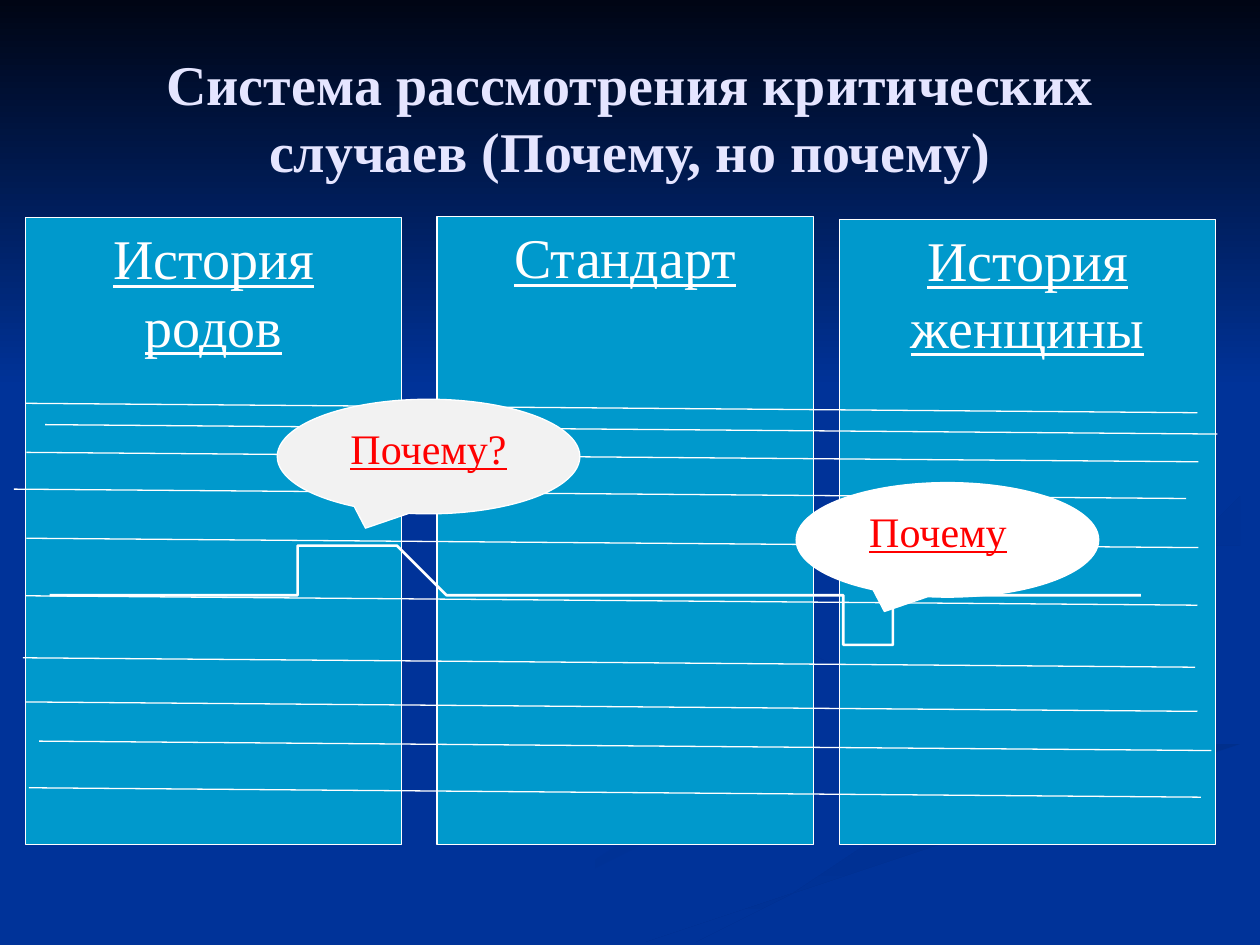
import pptx
import pptx.dml.color
import pptx.enum.shapes
import pptx.enum.text
import pptx.oxml.ns
import pptx.util
from lxml import etree
from pptx.util import Cm

FONT = "Times New Roman"
WHITE, RED, NAVY, PANEL_BLUE = "FFFFFF", "FF0000", "003399", "0099CC"
Shapes = pptx.enum.shapes.MSO_SHAPE
Anchor = pptx.enum.text.MSO_ANCHOR

# Background swooshes: outline in cm, gradient colours, counter-clockwise angle
SWOOSHES = [
    ([(19.8, 14.05), (18.5, 13.5), (15.5, 12.6), (14.6, 11.9), (14.5, 12.1),
      (15.5, 12.6), (18.5, 13.6), (19.8, 14.1), (19.9, 14.5), (19, 15.1),
      (17.4, 15.6), (13.7, 16.5), (10.6, 17.5), (7.62, 19.02), (9.17, 19.02),
      (12.7, 17.4), (15.8, 16.4), (19.2, 15.6), (20.2, 15), (20.2, 14.4)],
     (NAVY, "003193"), 0),
    ([(12.78, 19.02), (14.5, 19.02), (16.5, 18), (19.1, 17.1), (21.9, 16.3),
      (25.35, 15.47), (25.35, 14.76), (23.8, 15.3), (19.4, 16.4),
      (16, 17.6), (13.18, 18.97)],
     ("002F8C", NAVY), 270),
    ([(19.84, 11.68), (20.1, 12.15), (21, 12.6), (20.5, 12.2), (20.6, 11.75),
      (22.3, 11.15), (25.35, 10.67), (25.35, 10.21), (23.7, 10.54),
      (21.2, 10.92), (20.1, 11.35)],
     ("003091", NAVY), 315),
    ([(17.35, 10.92), (20.4, 10.3), (22.4, 9.4), (22.7, 8.5), (22.2, 7.6),
      (20.9, 6.6), (19.35, 5.92), (21, 6.75), (22.3, 7.8), (22.5, 8.7),
      (21.6, 9.5), (19.4, 10.1), (16.5, 10.67), (15.2, 11.1), (14.66, 11.73),
      (14.9, 12.2), (15.8, 12.7), (15.1, 12.05), (15.3, 11.6), (16, 11.2)],
     ("002F8E", NAVY), 315),
]

PANELS = [(0.51, 4.39, "История родов"), (8.81, 4.37, "Стандарт"),
          (16.92, 4.42, "История женщины")]
PANEL_WIDTH, PANEL_BOTTOM = 7.59, 17.02

# All record lines share one slope
LINE_STARTS = [(0.51, 8.13), (0.91, 8.56), (0.53, 9.12), (0.28, 9.86),
               (0.53, 10.85), (0.51, 12.01), (0.46, 13.26), (0.51, 14.15),
               (0.79, 14.94), (0.58, 15.88)]
LINE_RUN, LINE_DROP = 23.63, 0.19

DEVIATION_CURVE = [
    (0.58, 11.63), (1.02, 11.57), (1.52, 11.53), (5.61, 11.51), (5.82, 11.46),
    (6.2, 11.4), (6.5, 11.28), (6.78, 11.1), (7.04, 10.87), (7.14, 10.8),
    (7.47, 10.69), (7.67, 10.74), (7.87, 11), (8.2, 11.28), (8.26, 11.4),
    (8.61, 11.63), (8.89, 11.76), (11.07, 11.86), (14.94, 11.94),
    (16.46, 12.04), (16.71, 12.07), (16.87, 12.17), (17.2, 12.42),
    (17.25, 12.57), (17.4, 12.6), (17.65, 12.7), (17.86, 12.75), (18.2, 12.7),
    (18.42, 12.59), (18.5, 12.42), (18.82, 12.24), (19.13, 12.12),
    (19.46, 12.04), (19.81, 11.89), (21.6, 11.86), (23.44, 11.86)]


def color(value):
    return pptx.dml.color.RGBColor.from_string(value)


def set_line(item, width=0.75):
    item.line.color.rgb = color(WHITE)
    item.line.width = pptx.util.Pt(width)


def set_gradient(shape, colors, angle):
    shape.fill.gradient()
    shape.fill.gradient_angle = angle
    for stop, position, value in zip(shape.fill.gradient_stops, (0, 1), colors):
        stop.position = position
        stop.color.rgb = color(value)
    shape.line.fill.background()
    shape.shadow.inherit = False


def set_text(shape, text, size, text_color, anchor, bold=False, underline=False):
    frame = shape.text_frame
    frame.word_wrap = True
    frame.vertical_anchor = anchor
    paragraph = frame.paragraphs[0]
    paragraph.text = text
    paragraph.alignment = pptx.enum.text.PP_ALIGN.CENTER
    font = paragraph.font
    font.name, font.size = FONT, pptx.util.Pt(size)
    font.bold, font.underline = bold, underline
    font.color.rgb = color(text_color)


def add_outline(slide, points, close):
    builder = slide.shapes.build_freeform(*points[0], scale=Cm(1))
    builder.add_line_segments(points[1:], close=close)
    shape = builder.convert_to_shape()
    shape.shadow.inherit = False
    return shape


def add_background(slide):
    slide.background.fill.solid()
    slide.background.fill.fore_color.rgb = color(NAVY)
    for points, colors, angle in SWOOSHES:
        set_gradient(add_outline(slide, points, True), colors, angle)
    sky = slide.shapes.add_shape(Shapes.RECTANGLE, 0, 0, Cm(25.4), Cm(7.82))
    set_gradient(sky, ("000514", NAVY), 270)


def add_title(slide, text):
    title = slide.shapes.add_textbox(Cm(1.27), Cm(0.76), Cm(22.86), Cm(3.18))
    set_text(title, text, 32, "E5E5FF", Anchor.MIDDLE, bold=True)


def add_box(slide, kind, left, top, width, height, fill, text, size, text_color):
    shape = slide.shapes.add_shape(kind, Cm(left), Cm(top), Cm(width), Cm(height))
    shape.shadow.inherit = False
    shape.fill.solid()
    shape.fill.fore_color.rgb = color(fill)
    set_line(shape)
    set_text(shape, text, size, text_color, Anchor.TOP, underline=True)
    return shape


def add_callout(slide, left, top, fill, text):
    return add_box(slide, Shapes.OVAL_CALLOUT, left, top, 6.1, 2.31,
                   fill, text, 24, RED)


def add_record_line(slide, left, top):
    line = slide.shapes.add_connector(
        pptx.enum.shapes.MSO_CONNECTOR.STRAIGHT,
        Cm(left), Cm(top), Cm(left + LINE_RUN), Cm(top + LINE_DROP))
    set_line(line)
    etree.SubElement(line._element.spPr, pptx.oxml.ns.qn("a:effectLst"))


def main():
    presentation = pptx.Presentation()
    presentation.slide_width, presentation.slide_height = Cm(25.4), Cm(19.05)
    slide = presentation.slides.add_slide(presentation.slide_layouts[6])

    add_background(slide)
    add_title(slide, "Система рассмотрения критических случаев (Почему, но почему)")

    # Three columns crossed by record lines
    for left, top, text in PANELS:
        add_box(slide, Shapes.RECTANGLE, left, top, PANEL_WIDTH,
                PANEL_BOTTOM - top, PANEL_BLUE, text, 32, WHITE)
    for left, top in LINE_STARTS:
        add_record_line(slide, left, top)

    # Curve with its two questioned deviations
    curve = add_outline(slide, DEVIATION_CURVE, False)
    curve.fill.background()
    set_line(curve, 1.5)
    add_callout(slide, 5.59, 8.05, "F2F2F2", "Почему?")
    second = add_callout(slide, 16.05, 9.73, WHITE, "Почему")
    second.text_frame.margin_right = Cm(0.63)  # text sits left of centre

    presentation.save("out.pptx")


if __name__ == "__main__":
    main()
